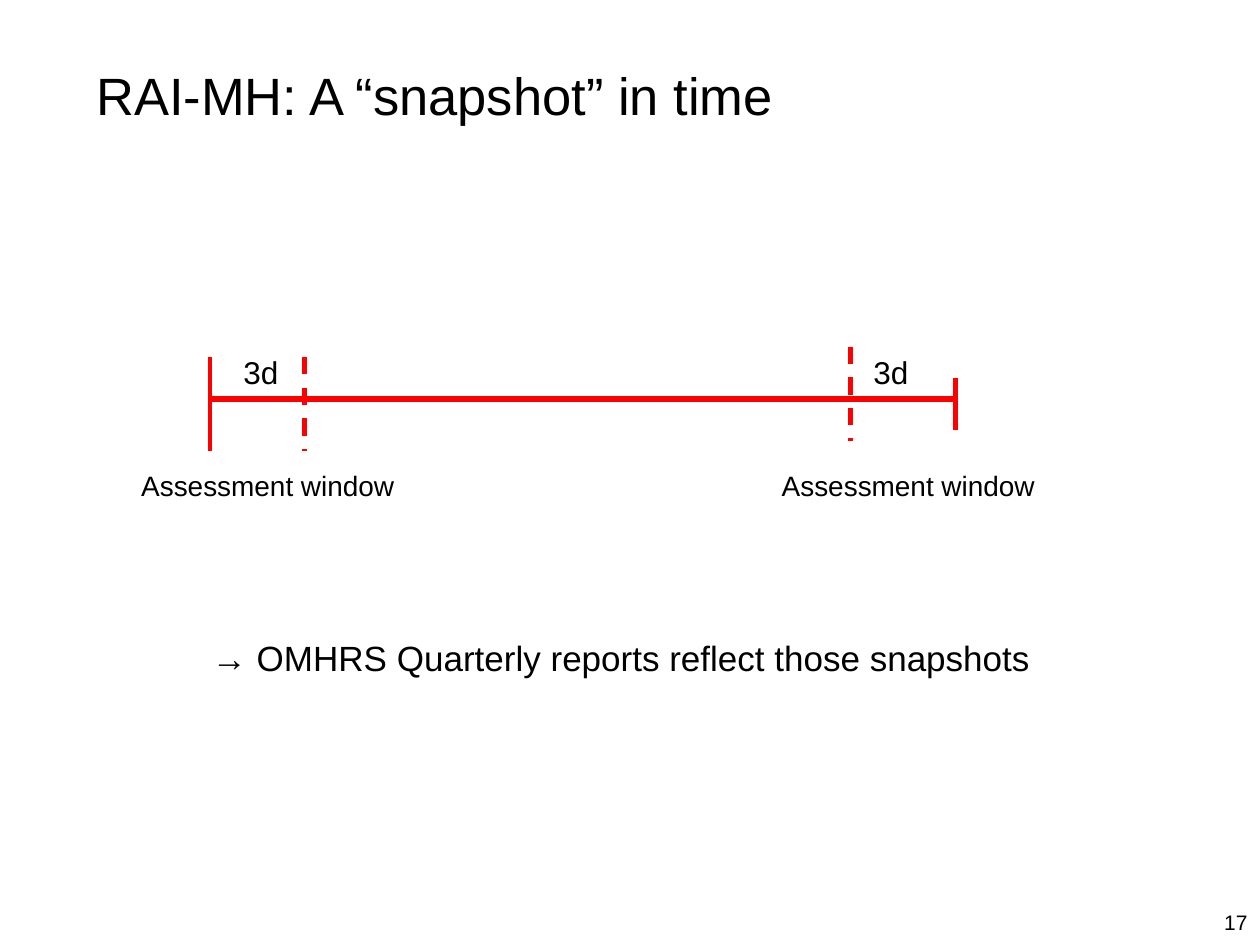
import dataclasses

import pptx
import pptx.dml.color
import pptx.enum.dml
import pptx.enum.shapes
import pptx.enum.text
import pptx.oxml
import pptx.oxml.ns
import pptx.slide
import pptx.util

# Grid of 120 columns by 90 rows over the slide
COLUMNS, ROWS = 120, 90
WIDTH, HEIGHT = pptx.util.Inches(10), pptx.util.Inches(7.5)
BLACK, RED, WHITE = "000000", "FF0000", "FFFFFF"
ALIGN = pptx.enum.text.PP_ALIGN
ANCHOR = pptx.enum.text.MSO_ANCHOR


@dataclasses.dataclass
class Label:
    text: str
    column: float
    row: float
    columns: float
    rows: float
    size: int
    align: ALIGN = ALIGN.LEFT
    anchor: ANCHOR = ANCHOR.TOP


@dataclasses.dataclass
class Rule:
    start: tuple[float, float]
    end: tuple[float, float]
    weight: float = 2.5
    dashed: bool = False


def across(columns: float) -> int:
    return round(WIDTH * columns / COLUMNS)


def down(rows: float) -> int:
    return round(HEIGHT * rows / ROWS)


def color(value: str) -> pptx.dml.color.RGBColor:
    return pptx.dml.color.RGBColor.from_string(value)


def draw_label(page: pptx.slide.Slide, label: Label) -> None:
    box = page.shapes.add_textbox(across(label.column), down(label.row),
                                  across(label.columns), down(label.rows))
    frame = box.text_frame
    frame.word_wrap = True
    frame.vertical_anchor = label.anchor
    para = frame.paragraphs[0]
    para.alignment = label.align
    span = para.add_run()
    span.text = label.text
    formats = {"name": "Arial", "size": pptx.util.Pt(label.size)}
    for name, value in formats.items():
        setattr(span.font, name, value)
    span.font.color.rgb = color(BLACK)


def draw_rule(page: pptx.slide.Slide, rule: Rule) -> None:
    line = page.shapes.add_connector(
        pptx.enum.shapes.MSO_CONNECTOR.STRAIGHT,
        across(rule.start[0]), down(rule.start[1]),
        across(rule.end[0]), down(rule.end[1]))
    line.line.color.rgb = color(RED)
    line.line.width = pptx.util.Pt(rule.weight)
    if rule.dashed:
        line.line.dash_style = pptx.enum.dml.MSO_LINE.DASH
    properties = line._element.spPr
    properties.append(pptx.oxml.parse_xml(
        f'<a:effectLst {pptx.oxml.ns.nsdecls("a")}/>'))


def main() -> None:
    deck = pptx.Presentation()
    deck.slide_width, deck.slide_height = WIDTH, HEIGHT
    page = deck.slides.add_slide(deck.slide_layouts[6])
    page.background.fill.solid()
    page.background.fill.fore_color.rgb = color(WHITE)

    # Title, conclusion and page number
    labels = [
        Label("RAI-MH: A “snapshot” in time", 8, 4, 100, 10, 30,
              anchor=ANCHOR.MIDDLE),
        Label("→ OMHRS Quarterly reports reflect those snapshots",
              19, 60, 83, 5.3, 20),
        Label("17", 107, 86, 13, 4, 12, ALIGN.RIGHT),
    ]

    # Captions of the two assessment windows
    for caption_column, days_column in ((6, 22), (67, 82)):
        labels += [
            Label("Assessment window", caption_column, 44, 39, 4.4, 16,
                  ALIGN.CENTER),
            Label("3d", days_column, 33, 6, 4.8, 18),
        ]

    # Timeline with its ends and the window limits
    first, last, axis = 20, 91, 38
    rules = [
        Rule((first, axis), (last, axis), weight=3),
        Rule((last, 36), (last, 41)),
        Rule((first, 34), (first, 43)),
        Rule((29, 34), (29, 43), dashed=True),
        Rule((81, 33), (81, 42), dashed=True),
    ]

    for rule in rules:
        draw_rule(page, rule)
    for label in labels:
        draw_label(page, label)
    deck.save("out.pptx")


if __name__ == "__main__":
    main()
